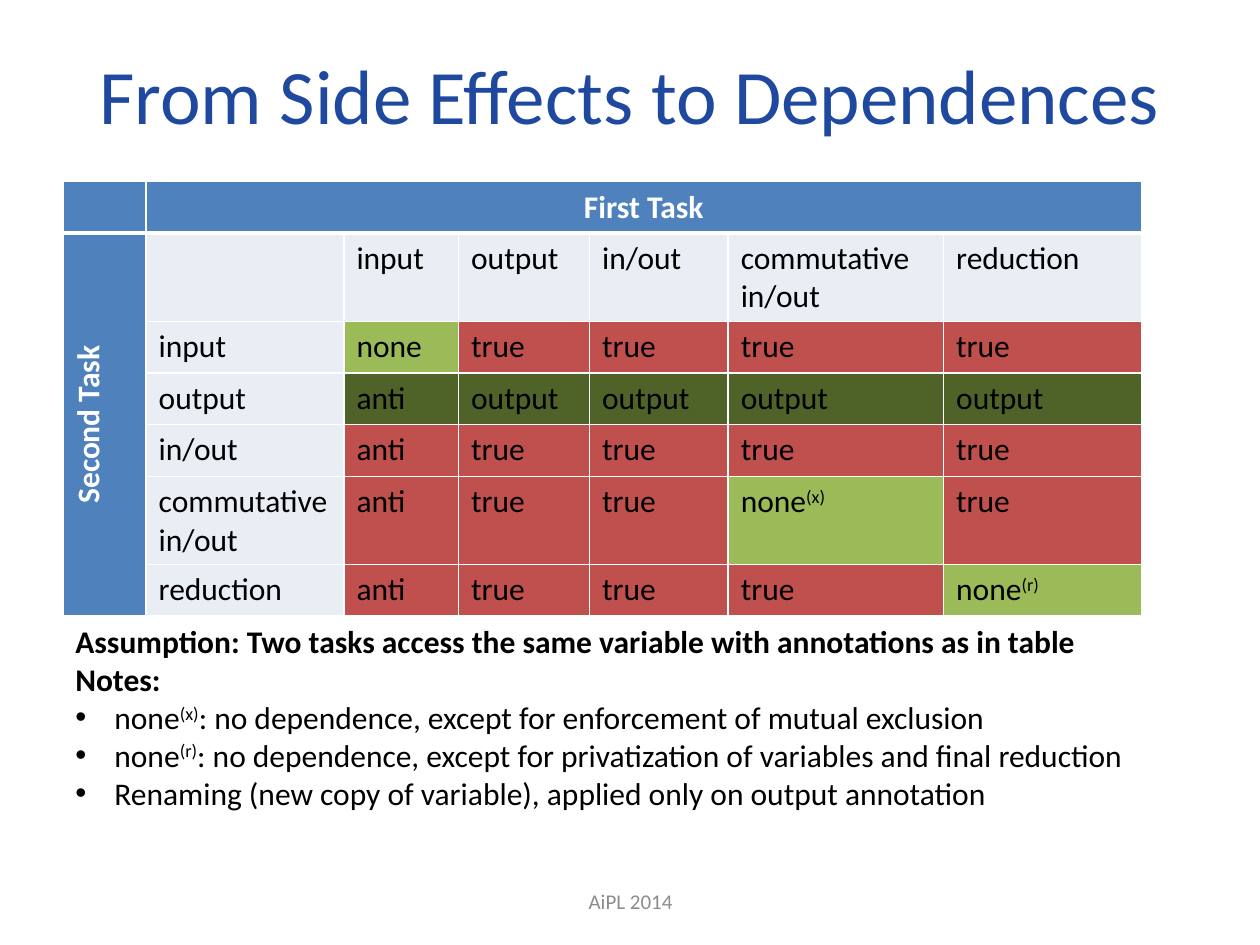
import pptx
import pptx.dml.color
import pptx.enum.text
import pptx.oxml.ns
import pptx.util
from lxml import etree

Inches = pptx.util.Inches
Pt = pptx.util.Pt
ALIGN = pptx.enum.text.PP_ALIGN
ANCHOR = pptx.enum.text.MSO_ANCHOR
qn = pptx.oxml.ns.qn

BLUE, PALE, GREEN, OLIVE, RED = "4F81BD", "E9EDF4", "9BBB59", "4F6228", "C0504D"
WHITE, BLACK = "FFFFFF", "000000"

ANNOTATIONS = ["input", "output", "in/out", "commutative in/out", "reduction"]
DEPENDENCES = [
    ["none", "true", "true", "true", "true"],
    ["anti", "output", "output", "output", "output"],
    ["anti", "true", "true", "true", "true"],
    ["anti", "true", "true", "none^(x)", "true"],
    ["anti", "true", "true", "true", "none^(r)"],
]
COLUMN_WIDTHS = [0.66, 1.57, 0.91, 1.04, 1.1, 1.71, 1.57]
ROW_HEIGHTS = [0.41, 0.7, 0.41, 0.41, 0.41, 0.7, 0.41]
NOTES = [
    "none^(x)^: no dependence, except for enforcement of mutual exclusion",
    "none^(r)^: no dependence, except for privatization of variables and final reduction",
    "Renaming (new copy of variable), applied only on output annotation",
]


def color(value):
    return pptx.dml.color.RGBColor.from_string(value)


def write(para, text, size=18, ink=BLACK, bold=False, align=ALIGN.LEFT, bullet=False):
    """Fill a paragraph; text between ^ marks is superscript."""
    para.alignment = align
    if bullet:
        properties = para._p.get_or_add_pPr()
        properties.set("marL", str(Inches(0.31)))
        properties.set("indent", str(-Inches(0.31)))
        etree.SubElement(properties, qn("a:buFont")).set("typeface", "Arial")
        etree.SubElement(properties, qn("a:buChar")).set("char", "•")
    for index, part in enumerate(text.split("^")):
        if not part:
            continue
        span = para.add_run()
        span.text = part
        span.font.name = "Calibri"
        span.font.size = Pt(size)
        span.font.bold = bold
        span.font.color.rgb = color(ink)
        if index % 2:
            span._r.get_or_add_rPr().set("baseline", "30000")


def dependence_fill(row, text):
    if text.startswith("none"):
        return GREEN
    return OLIVE if ANNOTATIONS[row] == "output" else RED


class SlideBuilder:
    def __init__(self, slide):
        self.slide = slide

    def text(self, left, top, width, height, paragraphs, anchor=ANCHOR.TOP, fill=None):
        box = self.slide.shapes.add_textbox(
            Inches(left), Inches(top), Inches(width), Inches(height))
        if fill:
            box.fill.solid()
            box.fill.fore_color.rgb = color(fill)
        frame = box.text_frame
        frame.word_wrap = True
        frame.vertical_anchor = anchor
        for index, (text, style) in enumerate(paragraphs):
            para = frame.add_paragraph() if index else frame.paragraphs[0]
            write(para, text, **style)

    def table(self, left, top, widths, heights):
        table = self.slide.shapes.add_table(
            len(heights), len(widths), Inches(left), Inches(top),
            Inches(sum(widths)), Inches(sum(heights))).table
        table.first_row = table.horz_banding = False
        for column, width in zip(table.columns, widths):
            column.width = Inches(width)
        for row, height in zip(table.rows, heights):
            row.height = Inches(height)
        for row in range(len(heights)):
            for column in range(len(widths)):
                self.borders(table.cell(row, column),
                             top=3 if row == 1 else 1, bottom=3 if row == 0 else 1)
        return table

    def borders(self, cell, top, bottom):
        properties = cell._tc.get_or_add_tcPr()
        for side, points in zip("LRTB", (1, 1, top, bottom)):
            line = etree.SubElement(properties, qn(f"a:ln{side}"), w=str(Pt(points)))
            fill = etree.SubElement(line, qn("a:solidFill"))
            etree.SubElement(fill, qn("a:srgbClr"), val=WHITE)

    def cell(self, cell, text, fill, anchor=ANCHOR.TOP, **style):
        cell.fill.solid()
        cell.fill.fore_color.rgb = color(fill)
        cell.vertical_anchor = anchor
        write(cell.text_frame.paragraphs[0], text, **style)


def add_dependence_table(builder):
    table = builder.table(0.5, 1.44, COLUMN_WIDTHS, ROW_HEIGHTS)
    first_task, second_task = table.cell(0, 1), table.cell(1, 0)
    first_task.merge(table.cell(0, 6))
    second_task.merge(table.cell(6, 0))
    heading = dict(fill=BLUE, anchor=ANCHOR.MIDDLE, ink=WHITE, bold=True,
                   align=ALIGN.CENTER)
    builder.cell(table.cell(0, 0), "", **heading)
    builder.cell(first_task, "First Task", **heading)
    builder.cell(second_task, "Second Task", **heading)
    second_task._tc.get_or_add_tcPr().set("vert", "vert270")

    builder.cell(table.cell(1, 1), "", PALE)
    for index, annotation in enumerate(ANNOTATIONS):
        builder.cell(table.cell(1, index + 2), annotation, PALE)
        builder.cell(table.cell(index + 2, 1), annotation, PALE)
        for column, text in enumerate(DEPENDENCES[index]):
            builder.cell(table.cell(index + 2, column + 2), text,
                         dependence_fill(index, text))


def main():
    deck = pptx.Presentation()
    deck.slide_width, deck.slide_height = Inches(10), Inches(7.5)
    builder = SlideBuilder(deck.slides.add_slide(deck.slide_layouts[6]))

    builder.text(0.5, 0.12, 9, 1.25, [
        ("From Side Effects to Dependences",
         dict(size=44, ink="1F499F", align=ALIGN.CENTER))], anchor=ANCHOR.MIDDLE)
    add_dependence_table(builder)
    builder.text(3.42, 6.95, 3.17, 0.4, [
        ("AiPL 2014", dict(size=12, ink="8C8C8C", align=ALIGN.CENTER))],
        anchor=ANCHOR.MIDDLE)
    builder.text(0.5, 4.89, 9.1, 1.62, [
        ("Assumption: Two tasks access the same variable with annotations as in table",
         dict(bold=True)),
        ("Notes:", dict(bold=True)),
        *[(note, dict(bullet=True)) for note in NOTES]], fill=WHITE)
    deck.save("out.pptx")


if __name__ == "__main__":
    main()
